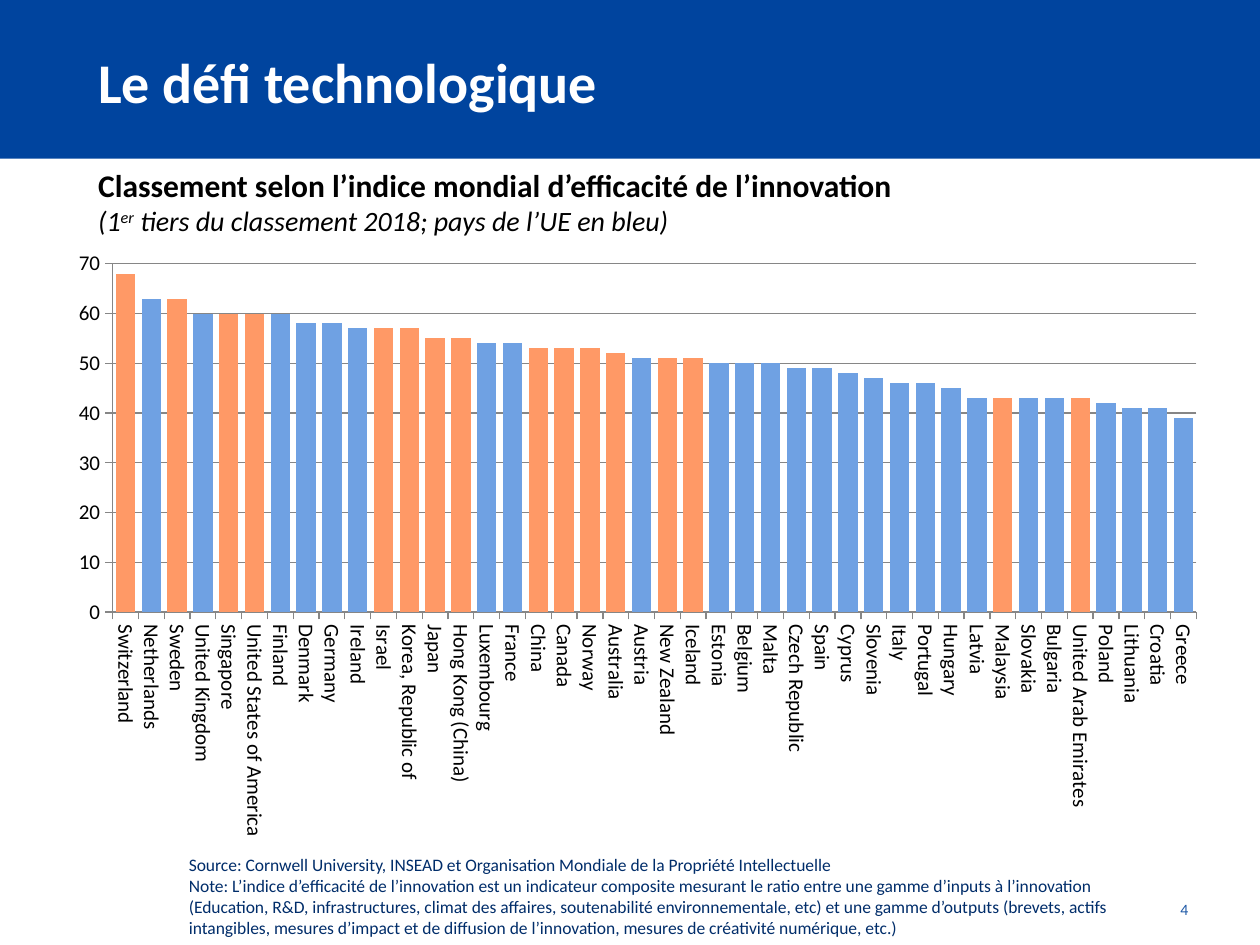
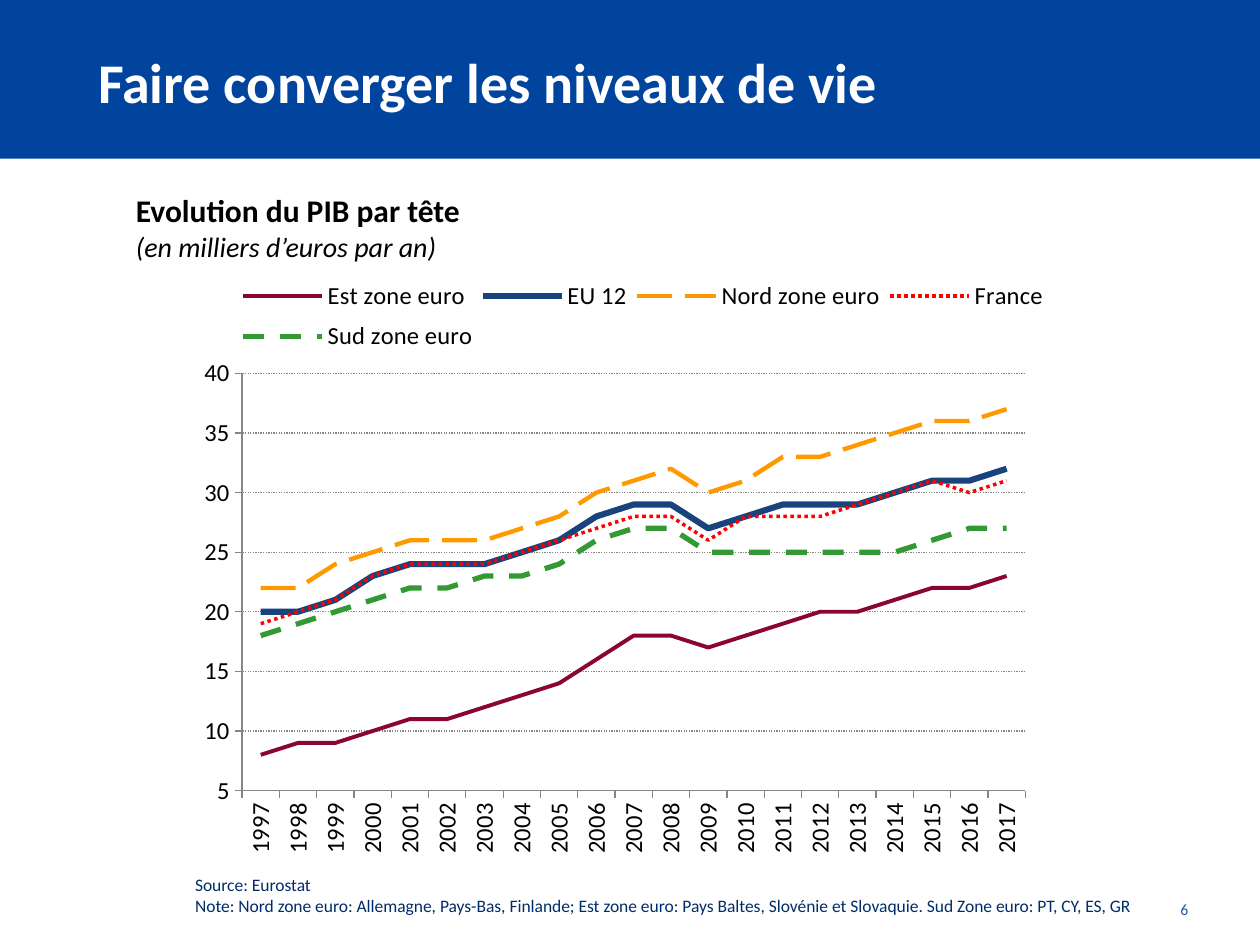
import pptx
import pptx.chart.data
import pptx.dml.color
import pptx.enum.chart
import pptx.enum.dml
import pptx.enum.shapes
import pptx.enum.text
import pptx.oxml
import pptx.oxml.ns
import pptx.util

Pt = pptx.util.Pt
qn = pptx.oxml.ns.qn
KIND = pptx.enum.chart.XL_CHART_TYPE
DASH = pptx.enum.dml.MSO_LINE
FONT = "Calibri"
BAND, NAVY, PAGE = "00449E", "002D6A", "205AA7"
WHITE, BLACK, GRAY = "FFFFFF", "000000", "868686"
ORANGE, BLUE = "FF9966", "6FA1E3"

SCORES = [
    ("Switzerland", 68), ("Netherlands", 63), ("Sweden", 63),
    ("United Kingdom", 60), ("Singapore", 60),
    ("United States of America", 60), ("Finland", 60), ("Denmark", 58),
    ("Germany", 58), ("Ireland", 57), ("Israel", 57),
    ("Korea, Republic of", 57), ("Japan", 55), ("Hong Kong (China)", 55),
    ("Luxembourg", 54), ("France", 54), ("China", 53), ("Canada", 53),
    ("Norway", 53), ("Australia", 52), ("Austria", 51),
    ("New Zealand", 51), ("Iceland", 51), ("Estonia", 50),
    ("Belgium", 50), ("Malta", 50), ("Czech Republic", 49), ("Spain", 49),
    ("Cyprus", 48), ("Slovenia", 47), ("Italy", 46), ("Portugal", 46),
    ("Hungary", 45), ("Latvia", 43), ("Malaysia", 43), ("Slovakia", 43),
    ("Bulgaria", 43), ("United Arab Emirates", 43), ("Poland", 42),
    ("Lithuania", 41), ("Croatia", 41), ("Greece", 39),
]
# Sweden is shown in orange along with the countries outside the EU.
WARM = {
    "Switzerland", "Sweden", "Singapore", "United States of America",
    "Israel", "Korea, Republic of", "Japan", "Hong Kong (China)", "China",
    "Canada", "Norway", "Australia", "New Zealand", "Iceland", "Malaysia",
    "United Arab Emirates",
}
YEARS = [str(year) for year in range(1997, 2018)]
# Name, colour, line width, dash, values
ZONES = [
    ("Est zone euro", "8B0534", 2.25, None,
     [8, 9, 9, 10, 11, 11, 12, 13, 14, 16, 18, 18, 17, 18, 19, 20, 20, 21,
      22, 22, 23]),
    ("EU 12", "18437D", 3.5, None,
     [20, 20, 21, 23, 24, 24, 24, 25, 26, 28, 29, 29, 27, 28, 29, 29, 29,
      30, 31, 31, 32]),
    ("Nord zone euro", "FF9900", 2.5, DASH.LONG_DASH,
     [22, 22, 24, 25, 26, 26, 26, 27, 28, 30, 31, 32, 30, 31, 33, 33, 34,
      35, 36, 36, 37]),
    ("France", "FF0000", 2, DASH.ROUND_DOT,
     [19, 20, 21, 23, 24, 24, 24, 25, 26, 27, 28, 28, 26, 28, 28, 28, 29,
      30, 31, 30, 31]),
    ("Sud zone euro", "339933", 3, DASH.DASH,
     [18, 19, 20, 21, 22, 22, 23, 23, 24, 26, 27, 27, 25, 25, 25, 25, 25,
      25, 26, 27, 27]),
]


def tint(code):
    return pptx.dml.color.RGBColor.from_string(code)


def place(part, index, box):
    """Fix a plot area or legend at x, y, w, h as shares of the chart."""
    for old in part.findall(qn("c:layout")):
        part.remove(old)
    inner = '<c:layoutTarget val="inner"/>' if index == 0 else ""
    modes = '<c:xMode val="edge"/><c:yMode val="edge"/>'
    sizes = "".join(f'<c:{key} val="{val}"/>' for key, val in zip("xywh", box))
    part.insert(index, pptx.oxml.parse_xml(
        f'<c:layout {pptx.oxml.ns.nsdecls("c")}><c:manualLayout>'
        f'{inner}{modes}{sizes}</c:manualLayout></c:layout>'))


class Deck:
    """Holds the shared style and the slide being filled."""

    def __init__(self):
        self.show = pptx.Presentation()
        self.show.slide_width, self.show.slide_height = Pt(720), Pt(540)

    def start(self, title, page):
        self.slide = self.show.slides.add_slide(self.show.slide_layouts[6])
        band = self.slide.shapes.add_shape(
            pptx.enum.shapes.MSO_SHAPE.RECTANGLE, 0, 0, Pt(720), Pt(90.7))
        band.shadow.inherit = False
        band.fill.solid()
        band.fill.fore_color.rgb = tint(BAND)
        band.line.fill.background()
        self.text((643.7, 510.5, 42.5, 28), [[(page, {})]], 9, PAGE,
                  align=pptx.enum.text.PP_ALIGN.RIGHT)
        self.text((49, 1.4, 648, 90), [[(title, {"bold": True})]], 32, WHITE,
                  anchor=pptx.enum.text.MSO_ANCHOR.MIDDLE)

    def text(self, box, paras, size, color, align=None, anchor=None):
        """Each paragraph is a list of (words, font settings) runs."""
        frame = self.slide.shapes.add_textbox(*map(Pt, box)).text_frame
        frame.word_wrap = True
        frame.vertical_anchor = anchor
        for num, runs in enumerate(paras):
            para = frame.add_paragraph() if num else frame.paragraphs[0]
            para.alignment = align
            for words, style in runs:
                run = para.add_run()
                run.text = words
                run.font.name = FONT
                run.font.size = Pt(style.get("size", size))
                run.font.color.rgb = tint(color)
                run.font.bold = style.get("bold", False)
                run.font.italic = style.get("italic", False)
                if style.get("raised"):
                    run.font._element.set("baseline", "30000")

    def head(self, left, top, title, parts):
        """Chart heading: bold line, then an italic line of (words, raised)."""
        under = [(words, {"size": 16, "italic": True, "raised": raised})
                 for words, raised in parts]
        self.text((left, top, 560, 54), [[(title, {"bold": True})], under],
                  18, BLACK)

    def notes(self, box, *lines):
        self.text(box, [[(line, {})] for line in lines], 10, NAVY)

    def chart(self, kind, box, cats, rows, size, span, step, turn, plot):
        """Rows are (name, values); span is the value range, turn in degrees."""
        data = pptx.chart.data.CategoryChartData(number_format="#,##0")
        data.categories = cats
        for name, vals in rows:
            data.add_series(name, vals)
        chart = self.slide.shapes.add_chart(kind, *map(Pt, box), data).chart
        chart.has_title = chart.has_legend = False
        chart.font.name, chart.font.size = FONT, Pt(size)
        chart.font.color.rgb = tint(BLACK)
        chart.plots[0].vary_by_categories = False
        down, across = chart.value_axis, chart.category_axis
        down.minimum_scale, down.maximum_scale = span
        down.major_unit = step
        down.has_major_gridlines = True
        across.has_major_gridlines = False
        for axis in (down, across):
            axis.major_tick_mark = pptx.enum.chart.XL_TICK_MARK.OUTSIDE
            axis.minor_tick_mark = pptx.enum.chart.XL_TICK_MARK.NONE
            axis.tick_labels.font.size = Pt(size)
        for line in (down.format.line, across.format.line,
                     down.major_gridlines.format.line):
            line.color.rgb = tint(GRAY)
            line.width = Pt(0.75)
        body = across._element.find(qn("c:txPr")).find(qn("a:bodyPr"))
        body.set("rot", str(turn * 60000))
        body.set("vert", "horz")
        place(chart._chartSpace.chart.plotArea, 0, plot)
        return chart

    def legend(self, chart, box):
        chart.has_legend = True
        chart.legend.position = pptx.enum.chart.XL_LEGEND_POSITION.TOP
        chart.legend.include_in_layout = False
        place(chart.legend._element, 1, box)


def rank(deck):
    deck.start("Le défi technologique", "4")
    deck.notes(
        (100.8, 484.6, 566, 55.4),
        "Source: Cornwell University, INSEAD et Organisation Mondiale de la "
        "Propriété Intellectuelle",
        "Note: L’indice d’efficacité de l’innovation est un indicateur "
        "composite mesurant le ratio entre une gamme d’inputs à l’innovation "
        "(Education, R&D, infrastructures, climat des affaires, "
        "soutenabilité environnementale, etc) et une gamme d’outputs "
        "(brevets, actifs intangibles, mesures d’impact et de diffusion de "
        "l’innovation, mesures de créativité numérique, etc.)")
    deck.head(49, 91.4,
              "Classement selon l’indice mondial d’efficacité de l’innovation",
              [("(1", False), ("er", True),
               (" tiers du classement 2018; pays de l’UE en bleu)", False)])
    lands, vals = zip(*SCORES)
    chart = deck.chart(KIND.COLUMN_CLUSTERED, (31, 136.8, 666, 349.2), lands,
                       [("Series 1", vals)], 12, (0, 70), 10, 90,
                       (0.05, 0.04, 0.93, 0.57))
    chart.plots[0].gap_width = 33
    bars = chart.series[0]
    bars.format.fill.solid()
    bars.format.fill.fore_color.rgb = tint(ORANGE)
    for num, land in enumerate(lands):
        if land not in WARM:
            fill = bars.points[num].format.fill
            fill.solid()
            fill.fore_color.rgb = tint(BLUE)


def trend(deck):
    deck.start("Faire converger les niveaux de vie", "6")
    chart = deck.chart(KIND.LINE, (69.1, 151.2, 532.8, 345.6), YEARS,
                       [(zone[0], zone[-1]) for zone in ZONES], 14, (5, 40),
                       5, -90, (0.13, 0.18, 0.84, 0.69))
    deck.legend(chart, (0.12, 0.01, 0.88, 0.15))
    chart.value_axis.major_gridlines.format.line.dash_style = DASH.ROUND_DOT
    for row, (_, color, width, dash, _) in zip(chart.series, ZONES):
        row.smooth = False
        row.marker.style = pptx.enum.chart.XL_MARKER_STYLE.NONE
        line = row.format.line
        line.color.rgb = tint(color)
        line.width = Pt(width)
        line.dash_style = dash
    deck.head(70.6, 105.8, "Evolution du PIB par tête",
              [("(en milliers d’euros par an)", False)])
    deck.notes(
        (104.4, 496, 556, 31.7), "Source: Eurostat",
        "Note: Nord zone euro: Allemagne, Pays-Bas, Finlande; Est zone euro: "
        "Pays Baltes, Slovénie et Slovaquie. Sud Zone euro: PT, CY, ES, GR")


def main():
    deck = Deck()
    rank(deck)
    trend(deck)
    deck.show.save("out.pptx")


if __name__ == "__main__":
    main()
